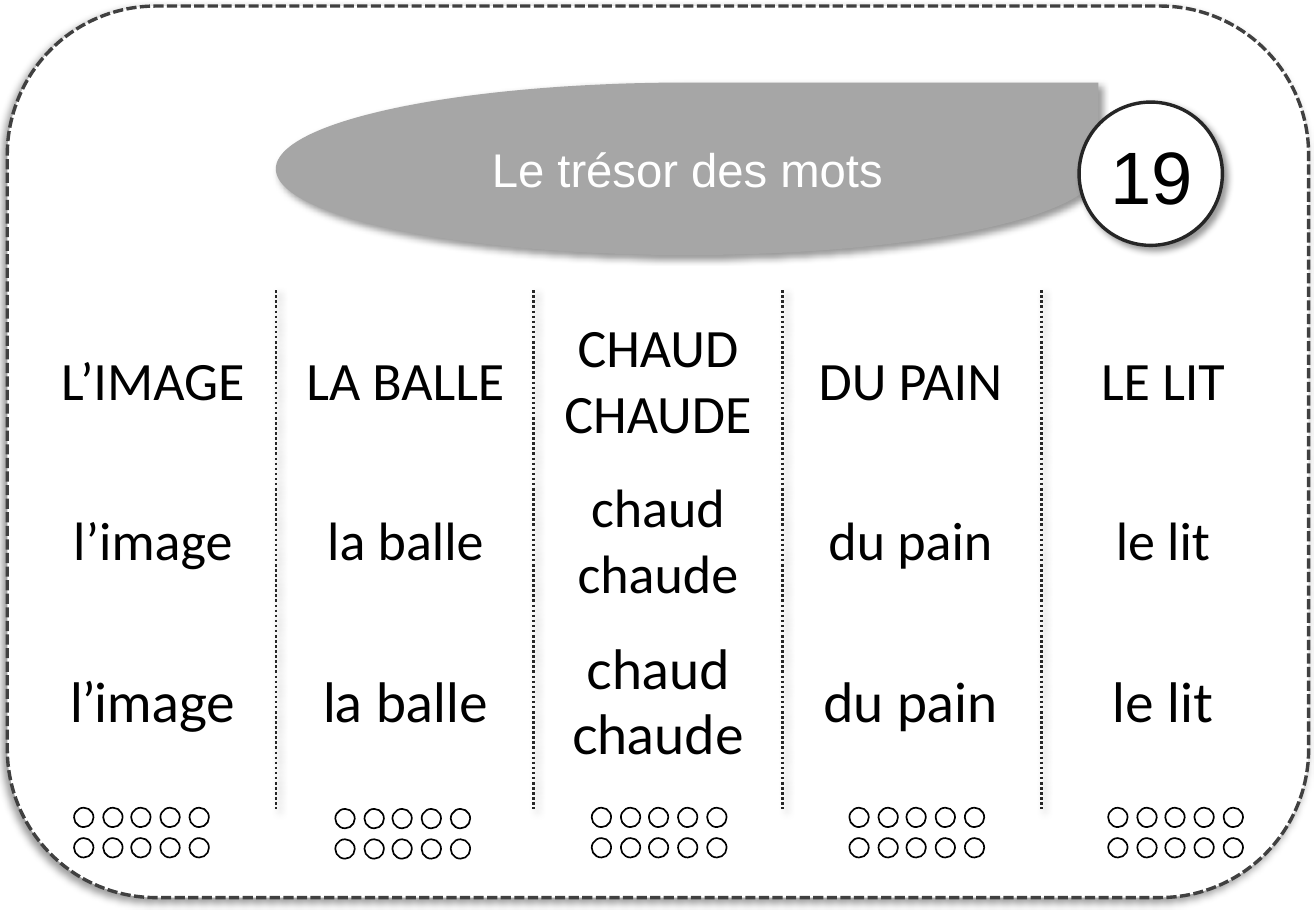
"""Build a French vocabulary card with five words in three writing styles."""
import dataclasses
import typing

import pptx
import pptx.dml.color
import pptx.enum.dml
import pptx.enum.shapes
import pptx.enum.text
import pptx.oxml
import pptx.oxml.ns
import pptx.util

EMU_PER_PX = 9144
SHAPE = pptx.enum.shapes.MSO_SHAPE
DASH = pptx.enum.dml.MSO_LINE
ANCHOR = pptx.enum.text.MSO_ANCHOR
CENTER = pptx.enum.text.PP_ALIGN.CENTER
NO_GRID_STYLE = "{2D5ABB26-0587-4C30-8999-92F81FD0307C}"


@dataclasses.dataclass(frozen=True)
class Box:
    left: int
    top: int
    width: int
    height: int


@dataclasses.dataclass(frozen=True)
class Panel:
    kind: typing.Any
    box: Box
    fill: str
    line: str | None = None
    line_width: float = 1
    dash: typing.Any = None
    shadow_angle: int | None = None


@dataclasses.dataclass(frozen=True)
class WordRow:
    font: str
    words: tuple[str, ...]


TITLE_BOX = Box(227, 68, 677, 142)
FRAME = Panel(SHAPE.ROUNDED_RECTANGLE, Box(6, 5, 1071, 734), "FFFFFF", "404040", 2, DASH.SQUARE_DOT, 135)
BANNER = Panel(SHAPE.TEAR, TITLE_BOX, "A6A6A6", shadow_angle=45)
BADGE = Panel(SHAPE.OVAL, Box(888, 84, 118, 118), "FFFFFF", "262626", 2, shadow_angle=45)
DIVIDERS = (227, 439, 644, 857)
DOT_GROUPS = ((61, 665), (276, 666), (487, 665), (699, 665), (912, 665))
WORDS = ("l’image", "la balle", "chaud\nchaude", "du pain", "le lit")
WORD_ROWS = (
    WordRow("Calibri", tuple(word.upper() for word in WORDS)),
    WordRow("Calibri", WORDS),
    WordRow("Lato", WORDS),
)


def px(length: float) -> int:
    return round(length * EMU_PER_PX)


def color(value: str) -> pptx.dml.color.RGBColor:
    return pptx.dml.color.RGBColor.from_string(value)


def apply_format(target: typing.Any, values: dict[str, typing.Any]) -> None:
    for name, value in values.items():
        setattr(target, name, value)


def place(shape: typing.Any, box: Box) -> None:
    apply_format(shape, {name: px(value) for name, value in dataclasses.asdict(box).items()})


def set_shadow(shape: typing.Any, angle: int | None) -> None:
    shadow = "" if angle is None else (
        f'<a:outerShdw blurRad="50800" dist="38100" dir="{angle * 60000}" rotWithShape="0">'
        '<a:srgbClr val="000000"><a:alpha val="40000"/></a:srgbClr></a:outerShdw>'
    )
    namespace = pptx.oxml.ns.nsdecls("a")
    shape.element.spPr.append(pptx.oxml.parse_xml(f"<a:effectLst {namespace}>{shadow}</a:effectLst>"))


def set_line(line: typing.Any, value: str, width: float, dash: typing.Any) -> None:
    line.color.rgb = color(value)
    line.width = pptx.util.Pt(width)
    if dash is not None:
        line.dash_style = dash


def write(text_frame: typing.Any, text: str, font: str, size: int, text_color: str) -> None:
    text_frame.text = text
    for paragraph in text_frame.paragraphs:
        apply_format(paragraph, {"alignment": CENTER, "space_before": pptx.util.Pt(0)})
        run_font = paragraph.runs[0].font
        apply_format(run_font, {"name": font, "size": pptx.util.Pt(size), "bold": False})
        run_font.color.rgb = color(text_color)


def draw_panel(shapes: typing.Any, panel: Panel) -> None:
    shape = shapes.add_shape(panel.kind, 0, 0, 0, 0)
    place(shape, panel.box)
    shape.fill.solid()
    shape.fill.fore_color.rgb = color(panel.fill)
    if panel.line is None:
        shape.line.fill.background()
    else:
        set_line(shape.line, panel.line, panel.line_width, panel.dash)
    set_shadow(shape, panel.shadow_angle)


def draw_divider(shapes: typing.Any, x: int) -> None:
    connector = shapes.add_connector(
        pptx.enum.shapes.MSO_CONNECTOR.STRAIGHT, px(x), px(239), px(x), px(666))
    set_line(connector.line, "262626", 1.5, DASH.ROUND_DOT)
    set_shadow(connector, 45)


def draw_dots(shapes: typing.Any, left: int, top: int) -> None:
    group = shapes.add_group_shape()
    for row in range(2):
        for column in range(5):
            box = Box(left + round(column * 23.7), top + row * 25, 16, 16)
            draw_panel(group.shapes, Panel(SHAPE.OVAL, box, "FFFFFF", "000000"))


def fill_placeholder(shape: typing.Any, box: Box, text: str, size: int,
                     text_color: str, frame_format: dict[str, typing.Any]) -> None:
    place(shape, box)
    write(shape.text_frame, text, "Arial", size, text_color)
    apply_format(shape.text_frame, {
        "auto_size": pptx.enum.text.MSO_AUTO_SIZE.NONE, "word_wrap": True, **frame_format})
    shape.element.getparent().append(shape.element)


def draw_words(shapes: typing.Any) -> None:
    graphic_frame = shapes.add_table(
        len(WORD_ROWS), len(WORDS), px(22), px(249), px(1039), px(394))
    table = graphic_frame.table
    apply_format(table, {"first_row": False, "horz_banding": False})
    for style in graphic_frame.element.iter(pptx.oxml.ns.qn("a:tableStyleId")):
        style.text = NO_GRID_STYLE
    for row_index, row in enumerate(WORD_ROWS):
        for column_index, word in enumerate(row.words):
            cell = table.cell(row_index, column_index)
            cell.fill.background()
            cell.vertical_anchor = ANCHOR.MIDDLE
            write(cell.text_frame, word, row.font, 32, "000000")


def main() -> None:
    presentation = pptx.Presentation()
    apply_format(presentation, {"slide_width": px(1083), "slide_height": px(750)})
    slide = presentation.slides.add_slide(presentation.slide_layouts[4])
    title, number, *unused = slide.placeholders
    for placeholder in unused:
        placeholder.element.getparent().remove(placeholder.element)
    draw_panel(slide.shapes, FRAME)
    for x in DIVIDERS:
        draw_divider(slide.shapes, x)
    for left, top in DOT_GROUPS:
        draw_dots(slide.shapes, left, top)
    draw_panel(slide.shapes, BANNER)
    fill_placeholder(title, TITLE_BOX, "Le trésor des mots", 28, "FFFFFF",
                     {"vertical_anchor": ANCHOR.MIDDLE})
    draw_panel(slide.shapes, BADGE)
    fill_placeholder(number, Box(889, 97, 118, 110), "19", 44, "000000",
                     {"vertical_anchor": ANCHOR.TOP, "margin_top": px(10)})
    draw_words(slide.shapes)
    presentation.save("out.pptx")


if __name__ == "__main__":
    main()
